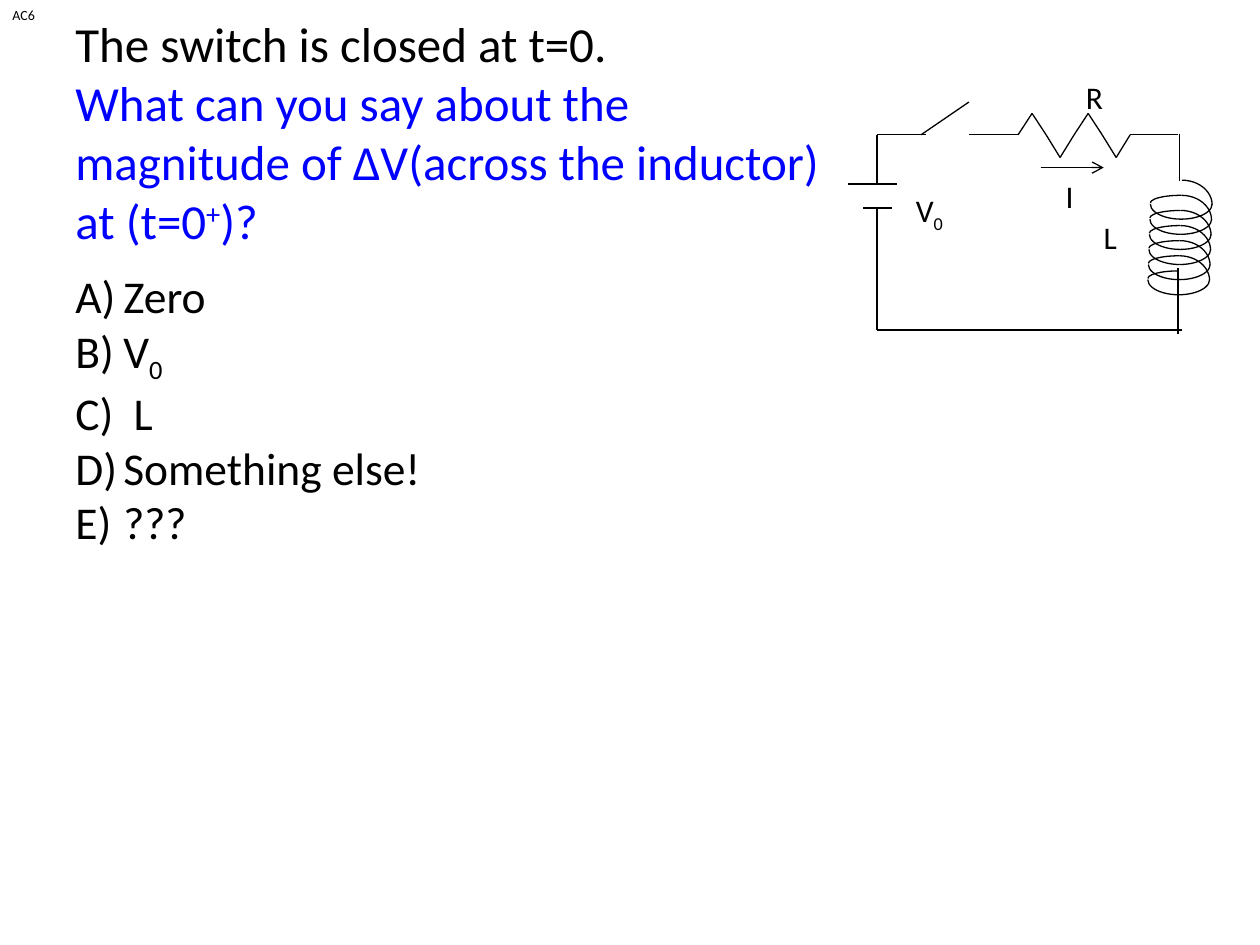
from itertools import pairwise

from lxml import etree
from pptx import Presentation
from pptx.dml.color import RGBColor
from pptx.enum.shapes import MSO_CONNECTOR, MSO_SHAPE
from pptx.enum.text import MSO_AUTO_SIZE
from pptx.oxml.ns import qn
from pptx.util import Inches, Pt

BLACK = RGBColor(0x00, 0x00, 0x00)
BLUE = RGBColor(0x00, 0x00, 0xFF)
FONT = "Calibri"
STRAIGHT = MSO_CONNECTOR.STRAIGHT
ARC = MSO_SHAPE.ARC
FIT_SHAPE = MSO_AUTO_SIZE.SHAPE_TO_FIT_TEXT


def add_line(shapes, start, end):
    x1, y1, x2, y2 = [Inches(v) for v in (*start, *end)]
    line = shapes.add_connector(STRAIGHT, x1, y1, x2, y2)
    line.line.color.rgb = BLACK
    line.line.width = Pt(0.75)
    etree.SubElement(line._element.spPr, qn("a:effectLst"))
    return line


def add_text(shapes, box, paragraphs, size, wrap=False):
    """Each paragraph is a list of (text, colour, baseline percentage) runs."""
    tf = shapes.add_textbox(*[Inches(v) for v in box]).text_frame
    tf.word_wrap = wrap
    tf.auto_size = FIT_SHAPE
    for i, runs in enumerate(paragraphs):
        p = tf.add_paragraph() if i else tf.paragraphs[0]
        for text, color, baseline in runs:
            r = p.add_run()
            r.text = text
            r.font.name = FONT
            r.font.size = Pt(size)
            r.font.color.rgb = color
            if baseline:
                r._r.get_or_add_rPr().set("baseline", str(baseline * 1000))
    return tf


prs = Presentation()
prs.slide_width = Inches(10)
prs.slide_height = Inches(7.5)
s = prs.slides.add_slide(prs.slide_layouts[6])

# Circuit wires, battery and switch
circuit = s.shapes.add_group_shape().shapes
wires = [
    ((6.73, 1.46), (7.12, 1.46)),  # battery plates
    ((6.85, 1.65), (7.08, 1.65)),
    ((6.96, 1.07), (6.96, 1.46)),
    ((7.35, 1.07), (6.96, 1.07)),
    ((6.96, 1.65), (6.96, 2.62)),
    ((7.69, 0.81), (7.31, 1.07)),  # open switch
    ((8.08, 1.07), (7.69, 1.07)),
    ((9.35, 1.07), (8.97, 1.07)),
    ((9.36, 1.06), (9.36, 1.44)),
    ((9.35, 2.13), (9.35, 2.65)),
    ((9.38, 2.62), (6.96, 2.62)),
]
for start, end in wires:
    add_line(circuit, start, end)

# Resistor
heights = [1.07, 0.9, 1.07, 1.25] * 2 + [1.07]
step = (8.97 - 8.08) / 8
zigzag = [(8.08 + step * i, y) for i, y in enumerate(heights)]
for start, end in pairwise(zigzag):
    add_line(circuit, start, end)

# Inductor: every turn is four quarter arcs (dx, dy, width, height, flips)
quarters = [
    (0.01, 0, 0.48, 0.39, ()),
    (0, 0.07, 0.49, 0.24, ("flipV",)),
    (0, 0.07, 0.49, 0.24, ("flipH", "flipV")),
    (0, 0.12, 0.49, 0.12, ("flipH",)),
]
for turn in range(6):
    left, top = 9.13 - 0.004 * turn, 1.43 + 0.12 * turn
    for dx, dy, width, height, flips in quarters:
        arc = circuit.add_shape(ARC, Inches(left + dx), Inches(top + dy),
                                Inches(width), Inches(height))
        arc.shadow.inherit = False
        arc.fill.background()
        arc.line.color.rgb = BLACK
        arc.line.width = Pt(0.75)
        for flip in flips:
            arc._element.spPr.xfrm.set(flip, "1")

add_text(circuit, (8.52, 0.57, 0.36, 0.37), [[("R", BLACK, 0)]], 18)
add_text(circuit, (8.66, 1.68, 0.31, 0.37), [[("L", BLACK, 0)]], 18)
add_text(circuit, (7.17, 1.47, 0.44, 0.37),
         [[("V", BLACK, 0), ("0", BLACK, -25)]], 18)

# Question
question = [
    [("The switch is closed at t=0.", BLACK, 0)],
    [("What can you say about the magnitude of ΔV(across the inductor) at (t=0",
      BLUE, 0), ("+", BLUE, 30), (")?", BLUE, 0)],
]
add_text(s.shapes, (0.5, 0.06, 6.11, 2.79), question, 28, wrap=True)

# Current
add_text(s.shapes, (8.36, 1.36, 0.27, 0.4), [[("I", BLACK, 0)]], 18)
current = add_line(s.shapes, (8.26, 1.33), (8.76, 1.33))
etree.SubElement(current.line._get_or_add_ln(), qn("a:tailEnd"), type="arrow")

# Answers
answers = [
    [("Zero", BLACK, 0)],
    [("V", BLACK, 0), ("0", BLACK, -25)],
    [(" L", BLACK, 0)],
    [("Something else!", BLACK, 0)],
    [("???", BLACK, 0)],
]
tf = add_text(s.shapes, (0.5, 2.08, 3.19, 2.29), answers, 26)
for p in tf.paragraphs:
    pPr = p._p.get_or_add_pPr()
    pPr.set("marL", str(Inches(0.38)))
    pPr.set("indent", str(-Inches(0.38)))
    etree.SubElement(pPr, qn("a:buFont"), typeface="+mj-lt")
    etree.SubElement(pPr, qn("a:buAutoNum"), type="alphaUcParenR")

add_text(s.shapes, (0, 0, 0.38, 0.24), [[("AC6", BLACK, 0)]], 8)

prs.save("out.pptx")
